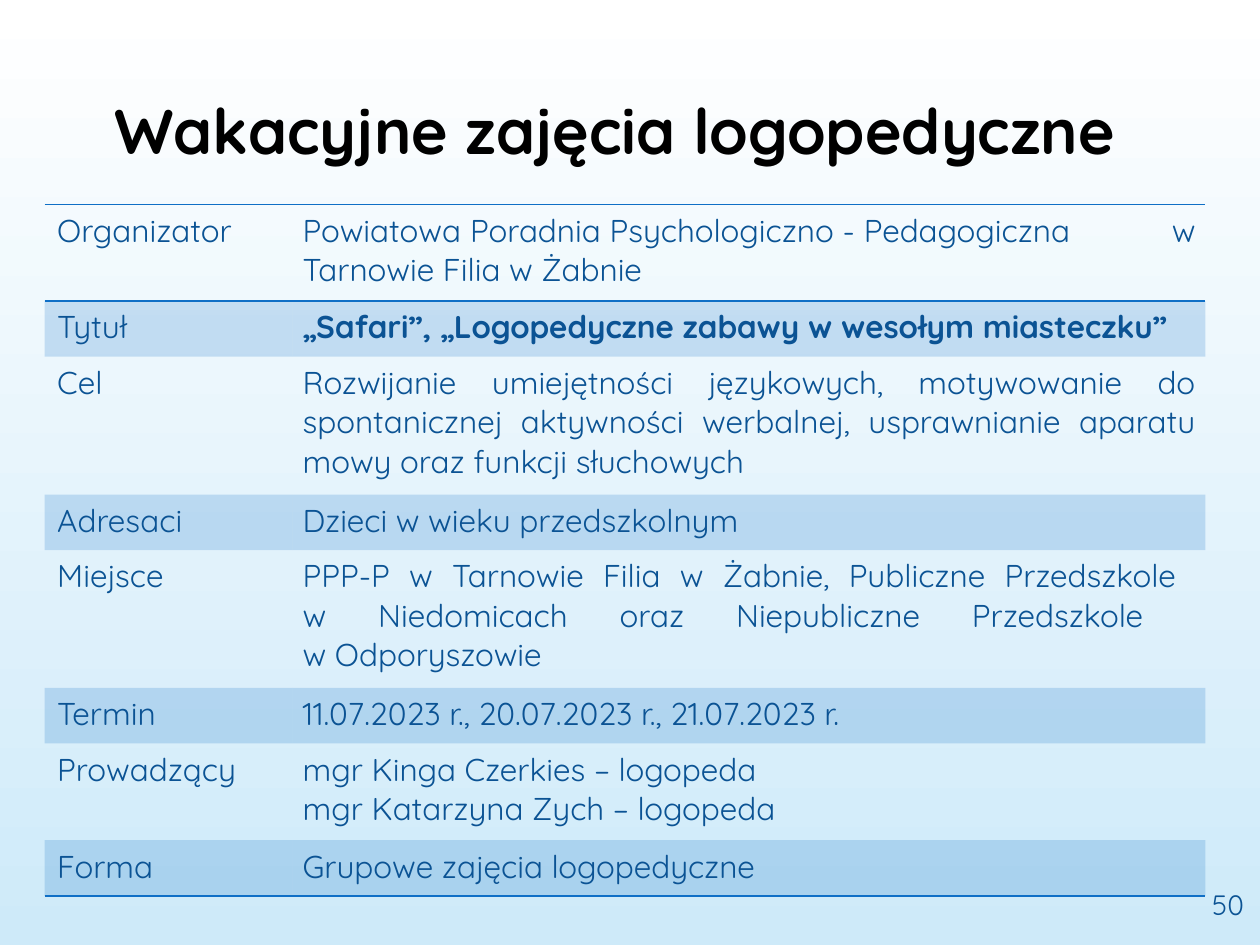
import dataclasses

import lxml.etree
import pptx
import pptx.dml.color
import pptx.enum.text
import pptx.oxml.ns
import pptx.util
from pptx.util import Cm

RGB = pptx.dml.color.RGBColor.from_string
ALIGN = pptx.enum.text.PP_ALIGN
ANCHOR = pptx.enum.text.MSO_ANCHOR
qn = pptx.oxml.ns.qn


@dataclasses.dataclass(frozen=True)
class Theme:
    font: str = "Quicksand"
    title_color: str = "000000"
    text_color: str = "0B5394"
    accent: str = "0F6FC6"
    band_opacity: int = 20
    sky: tuple = ("FFFFFF", "CEEAF9")
    title_size: int = 36
    body_size: int = 18
    number_size: int = 16


THEME = Theme()


def write(paragraph, text, size=THEME.body_size, color=THEME.text_color, bold=False):
    """Add text in runs, turning each newline into a line break."""
    for index, line in enumerate(text.split("\n")):
        if index:
            paragraph.add_line_break()
        run = paragraph.add_run()
        run.text = line
        run.font.name = THEME.font
        run.font.size = pptx.util.Pt(size)
        run.font.bold = bold
        run.font.color.rgb = RGB(color)


def add_rule(cell, side, position):
    """Draw a 1 pt border; position is its place among the cell properties."""
    rule = lxml.etree.Element(qn(f"a:{side}"), w=str(pptx.util.Pt(1)))
    fill = lxml.etree.SubElement(rule, qn("a:solidFill"))
    lxml.etree.SubElement(fill, qn("a:srgbClr"), val=THEME.accent)
    cell._tc.get_or_add_tcPr().insert(position, rule)


deck = pptx.Presentation()
deck.slide_width, deck.slide_height = Cm(25.4), Cm(19.05)
slide = deck.slides.add_slide(deck.slide_layouts[6])

sky = slide.background.fill
sky.gradient()
sky.gradient_angle = 270
for stop, color, position in zip(sky.gradient_stops, THEME.sky, (0, 1)):
    stop.color.rgb = RGB(color)
    stop.position = position

title = slide.shapes.add_textbox(Cm(1.09), Cm(1.73), Cm(22.6), Cm(2.59)).text_frame
title.word_wrap = True
title.paragraphs[0].alignment = ALIGN.CENTER
write(title.paragraphs[0], "Wakacyjne zajęcia logopedyczne",
      THEME.title_size, THEME.title_color, bold=True)

# Label, paragraphs of the description, row height in cm
details = [
    ("Organizator",
     ["Powiatowa Poradnia Psychologiczno - Pedagogiczna\tw Tarnowie Filia w Żabnie"], 1.95),
    ("Tytuł", ["„Safari”, „Logopedyczne zabawy w wesołym miasteczku”"], 1.12),
    ("Cel",
     ["Rozwijanie umiejętności językowych, motywowanie do spontanicznej aktywności "
      "werbalnej, usprawnianie aparatu mowy oraz funkcji słuchowych"], 2.78),
    ("Adresaci", ["Dzieci w wieku przedszkolnym"], 1.12),
    ("Miejsce",
     ["PPP-P w Tarnowie Filia w Żabnie, Publiczne Przedszkole \n"
      "w Niedomicach oraz Niepubliczne Przedszkole \nw Odporyszowie"], 2.78),
    ("Termin", ["11.07.2023 r., 20.07.2023 r., 21.07.2023 r."], 1.12),
    ("Prowadzący", ["mgr Kinga Czerkies – logopeda", "mgr Katarzyna Zych – logopeda"], 1.95),
    ("Forma", ["Grupowe zajęcia logopedyczne"], 1.12),
]
last = len(details) - 1
table_height = sum(height for _, _, height in details)
programme = slide.shapes.add_table(
    len(details), 2, Cm(0.9), Cm(4.12), Cm(23.4), Cm(table_height)).table
programme.first_row = programme.horz_banding = False
NO_STYLE = "{2D5ABB26-0587-4C30-8999-92F81FD0307C}"
programme._tbl.tblPr.find(qn("a:tableStyleId")).text = NO_STYLE
programme.columns[0].width, programme.columns[1].width = Cm(5), Cm(18.4)

for row, (label, description, height) in enumerate(details):
    programme.rows[row].height = Cm(height)
    label_cell, description_cell = programme.cell(row, 0), programme.cell(row, 1)
    write(label_cell.text_frame.paragraphs[0], label)

    description_cell.margin_left = description_cell.margin_right = Cm(0.2)
    for index, text in enumerate(description):
        frame = description_cell.text_frame
        paragraph = frame.add_paragraph() if index else frame.paragraphs[0]
        paragraph.alignment = ALIGN.JUSTIFY
        if "\t" in text:
            tabs = lxml.etree.SubElement(paragraph._p.get_or_add_pPr(), qn("a:tabLst"))
            lxml.etree.SubElement(tabs, qn("a:tab"), pos=str(Cm(17.5)), algn="l")
        write(paragraph, text, bold=label == "Tytuł")

    for cell in (label_cell, description_cell):
        if row % 2:
            cell.fill.solid()
            cell.fill.fore_color.rgb = RGB(THEME.accent)
            tint = cell._tc.tcPr.find(f".//{qn('a:srgbClr')}")
            lxml.etree.SubElement(tint, qn("a:alpha"), val=str(THEME.band_opacity * 1000))
        else:
            cell.fill.background()
        if row in (0, last):
            add_rule(cell, "lnB", 0)
        if row == 0:
            add_rule(cell, "lnT", 0)

number = slide.shapes.add_textbox(Cm(23.7), Cm(17.73), Cm(1.63), Cm(1.02)).text_frame
number.word_wrap = True
number.vertical_anchor = ANCHOR.MIDDLE
number.paragraphs[0].alignment = ALIGN.RIGHT
write(number.paragraphs[0], "50", THEME.number_size)

deck.save("out.pptx")
